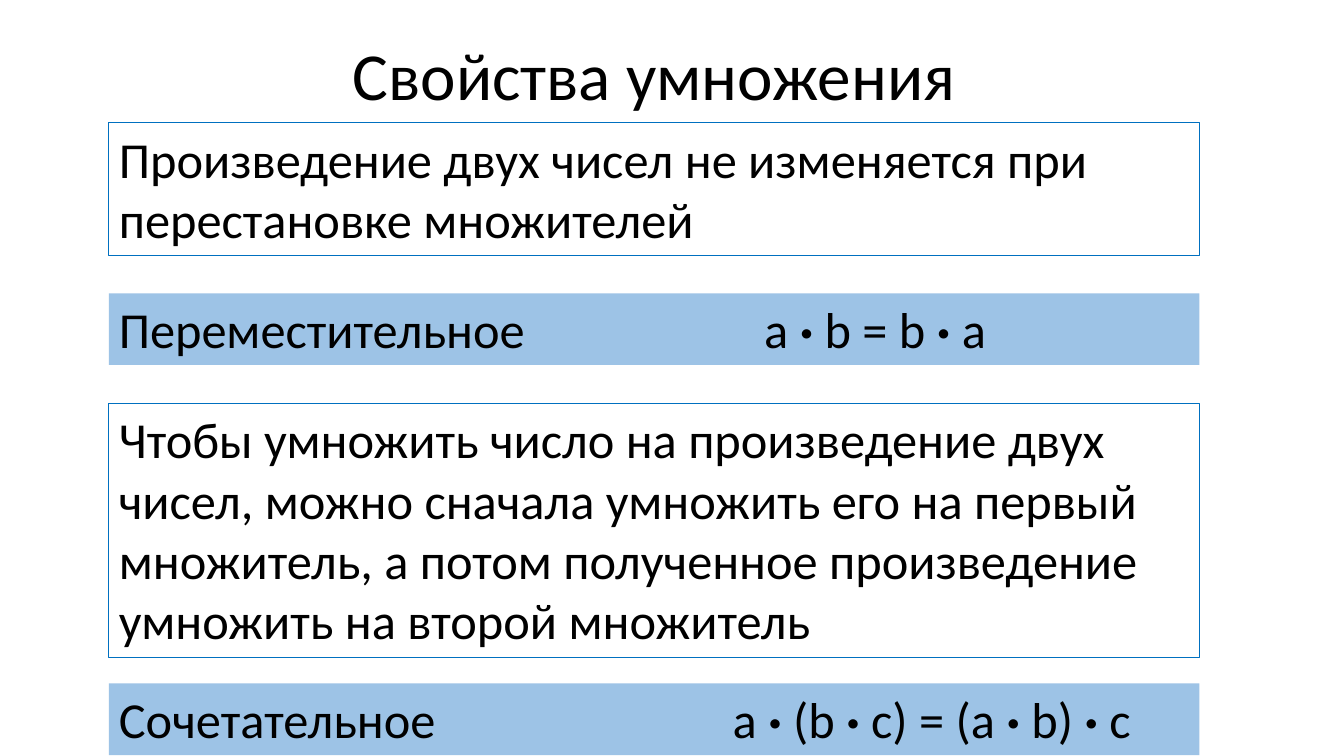
from dataclasses import dataclass

from lxml import etree
from pptx import Presentation
from pptx.dml.color import RGBColor
from pptx.enum.shapes import MSO_SHAPE
from pptx.enum.text import MSO_ANCHOR, MSO_AUTO_SIZE, PP_ALIGN
from pptx.oxml.ns import qn
from pptx.util import Pt

RECTANGLE = MSO_SHAPE.RECTANGLE
TOP, MIDDLE = MSO_ANCHOR.TOP, MSO_ANCHOR.MIDDLE
FIT_SHAPE = MSO_AUTO_SIZE.SHAPE_TO_FIT_TEXT
LEFT, CENTER = PP_ALIGN.LEFT, PP_ALIGN.CENTER

TITLE_ONLY_LAYOUT = 5
COLUMN_LEFT, COLUMN_WIDTH = 77.8, 779
TITLE_TOP, TITLE_HEIGHT = 19.4, 65.8
MULTIPLICATION_DOT = "·"


@dataclass(frozen=True)
class Theme:
    font: str = "Calibri"
    title_size: float = 48
    body_size: float = 36
    text: RGBColor = RGBColor(0x00, 0x00, 0x00)
    border: RGBColor = RGBColor(0x00, 0x70, 0xC0)
    border_width: float = 0.75
    band: RGBColor = RGBColor(0x9D, 0xC3, 0xE6)


@dataclass(frozen=True)
class Panel:
    """A bordered rule, or a filled band when it has a formula."""
    top: float
    height: float
    text: str
    formula: str = ""
    formula_left: float = 0


THEME = Theme()

PANELS = [
    Panel(87.8, 94.9, "Произведение двух чисел не изменяется при перестановке множителей"),
    Panel(209.5, 51.1, "Переместительное", "а · b = b · a", 461),
    Panel(288, 181.8, "Чтобы умножить число на произведение двух чисел, можно сначала "
          "умножить его на первый множитель, а потом полученное произведение "
          "умножить на второй множитель"),
    Panel(488.2, 51.1, "Сочетательное", "a · (b · c) = (a · b) · c", 438.5),
]


def add_tab_stop(paragraph, position: float) -> None:
    properties = paragraph._p.get_or_add_pPr()
    tab_list = etree.SubElement(properties, qn("a:tabLst"))
    etree.SubElement(tab_list, qn("a:tab"), pos=str(Pt(position)), algn="l")


def write_text(shape, text: str, *, size: float, alignment=LEFT, anchor=TOP,
               tab: float = 0) -> None:
    """Fill the shape with one paragraph, its multiplication dots in bold."""
    frame = shape.text_frame
    frame.word_wrap = True
    frame.auto_size = FIT_SHAPE
    frame.vertical_anchor = anchor
    paragraph = frame.paragraphs[0]
    paragraph.alignment = alignment
    if tab:
        add_tab_stop(paragraph, tab)
    spaced_dots = text.replace(MULTIPLICATION_DOT, f"\n{MULTIPLICATION_DOT}\n")
    for part in spaced_dots.split("\n"):
        run = paragraph.add_run()
        run.text = part
        run.font.name = THEME.font
        run.font.size = Pt(size)
        run.font.bold = part == MULTIPLICATION_DOT
        run.font.color.rgb = THEME.text


def add_title(slide, text: str) -> None:
    title = slide.shapes.title
    title.left, title.top = Pt(COLUMN_LEFT), Pt(TITLE_TOP)
    title.width, title.height = Pt(COLUMN_WIDTH), Pt(TITLE_HEIGHT)
    write_text(title, text, size=THEME.title_size, alignment=CENTER, anchor=MIDDLE)


def add_panel(slide, panel: Panel) -> None:
    shape = slide.shapes.add_shape(RECTANGLE, Pt(COLUMN_LEFT), Pt(panel.top),
                                   Pt(COLUMN_WIDTH), Pt(panel.height))
    shape.shadow.inherit = False
    text = panel.text
    if panel.formula:
        shape.fill.solid()
        shape.fill.fore_color.rgb = THEME.band
        shape.line.fill.background()
        text += "\t" + panel.formula
    else:
        shape.fill.background()
        shape.line.color.rgb = THEME.border
        shape.line.width = Pt(THEME.border_width)
    write_text(shape, text, size=THEME.body_size, tab=panel.formula_left)


def main() -> None:
    presentation = Presentation()
    presentation.slide_width, presentation.slide_height = Pt(960), Pt(540)
    slide = presentation.slides.add_slide(presentation.slide_layouts[TITLE_ONLY_LAYOUT])
    add_title(slide, "Свойства умножения")
    for panel in PANELS:
        add_panel(slide, panel)
    presentation.save("out.pptx")


if __name__ == "__main__":
    main()
